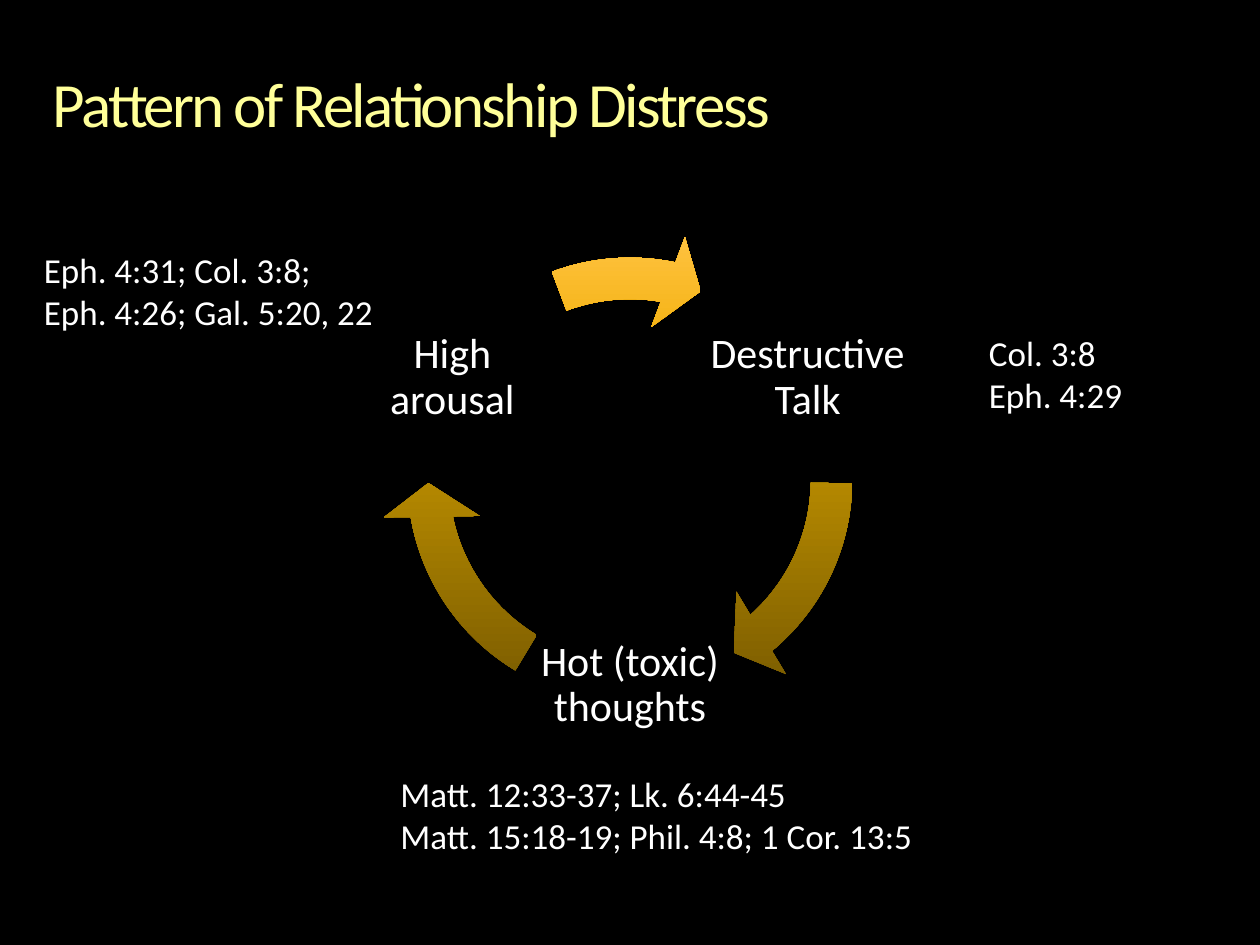
"""Build the relationship distress cycle slide."""
from lxml import etree
from pptx import Presentation
from pptx.dml.color import RGBColor
from pptx.enum.shapes import MSO_SHAPE
from pptx.enum.text import MSO_ANCHOR, MSO_AUTO_SIZE, PP_ALIGN
from pptx.oxml.ns import qn
from pptx.util import Inches, Pt

CIRCULAR_ARROW = MSO_SHAPE.CIRCULAR_ARROW
MIDDLE = MSO_ANCHOR.MIDDLE
FIT_SHAPE = MSO_AUTO_SIZE.SHAPE_TO_FIT_TEXT
CENTER = PP_ALIGN.CENTER

FONT = "Calibri"
BLACK, WHITE = "000000", "FFFFFF"
TITLE_STOPS = [(0, "FFFFB9"), (36, "FFFF99"), (86, "F6AE1E")]
ARROW_STOPS = [(0, "705400"), (50, "B48800"), (70, "F0AC00"), (100, "FFC342")]


def set_gradient(fill, element, stops, angle):
    fill.gradient()
    fill.gradient_angle = angle
    stop_list = element.find(".//" + qn("a:gsLst"))
    for old in list(stop_list):
        stop_list.remove(old)
    for position, color in stops:
        stop = etree.SubElement(stop_list, qn("a:gs"), pos=str(position * 1000))
        etree.SubElement(stop, qn("a:srgbClr"), val=color)


def add_text(box, lines, size, inset=None):
    sp = s.shapes.add_textbox(*map(Inches, box))
    tf = sp.text_frame
    if inset is not None:
        tf.margin_left = tf.margin_right = Inches(inset)
        tf.margin_top = tf.margin_bottom = Inches(inset)
    tf.text = "\n".join(lines)
    for p in tf.paragraphs:
        p.font.name = FONT
        p.font.size = Pt(size)
        p.font.color.rgb = RGBColor.from_string(WHITE)
    return tf


prs = Presentation()
prs.slide_width, prs.slide_height = Inches(10), Inches(7.5)
s = prs.slides.add_slide(prs.slide_layouts[6])
s.background.fill.solid()
s.background.fill.fore_color.rgb = RGBColor.from_string(BLACK)

tf = add_text((0.42, 0.58, 9.17, 0.56), ["Pattern of Relationship Distress"], 36, 0)
tf.word_wrap = True
p = tf.paragraphs[0]
p.line_spacing = 0.9
r = p.runs[0]
rPr = r._r.get_or_add_rPr()
rPr.set("spc", "-150")
set_gradient(r.font.fill, rPr, TITLE_STOPS, 270)

steps = [
    ("Destructive Talk", 5.57, 2.16, 29.624, 0.527),
    ("Hot (toxic) thoughts", 4.16, 4.6, 101.709, 72.611),
    ("High arousal", 2.75, 2.16, 168.554, 149.682),
]
for label, left, top, end, start in steps:
    tf = add_text((left, top, 1.68, 1.68), [label], 24, 0.03)
    tf.word_wrap = True
    tf.vertical_anchor = MIDDLE
    tf.paragraphs[0].alignment = CENTER
    tf.paragraphs[0].line_spacing = 0.9

    sp = s.shapes.add_shape(CIRCULAR_ARROW, Inches(3.02), Inches(1.83), Inches(3.96), Inches(3.96))
    for i, value in enumerate((0.083, 5.764, end, start, 0.096)):
        sp.adjustments[i] = value
    set_gradient(sp.fill, sp._element.spPr, ARROW_STOPS, 90)
    sp.line.fill.background()
    sp.shadow.inherit = False

references = [
    ((7.75, 2.58, 1.27, 0.77), ["Col. 3:8", "Eph. 4:29"]),
    ((3.08, 6.08, 4.33, 0.77), ["Matt. 12:33-37; Lk. 6:44-45", "Matt. 15:18-19; Phil. 4:8; 1 Cor. 13:5"]),
    ((0.25, 1.92, 2.84, 0.77), ["Eph. 4:31; Col. 3:8;", "Eph. 4:26; Gal. 5:20, 22"]),
]
for box, verses in references:
    tf = add_text(box, verses, 20)
    tf.word_wrap = False
    tf.auto_size = FIT_SHAPE

prs.save("out.pptx")
